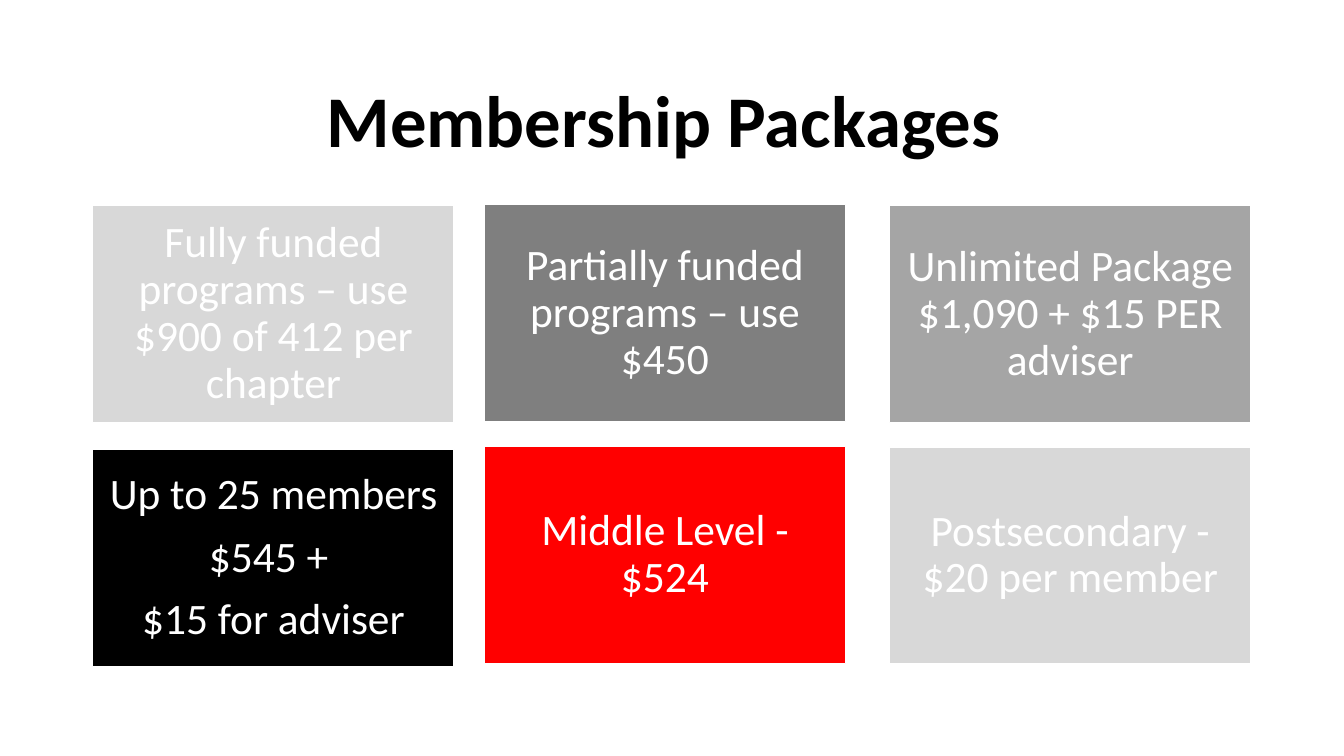
"""Build the Membership Packages slide."""
from pptx import Presentation
from pptx.dml.color import RGBColor as RGB
from pptx.enum.shapes import MSO_SHAPE as SHAPE
from pptx.enum.text import MSO_ANCHOR as ANCHOR, PP_ALIGN as ALIGN
from pptx.util import Pt

BLACK = RGB(0x00, 0x00, 0x00)
WHITE = RGB(0xFF, 0xFF, 0xFF)
RED = RGB(0xFF, 0x00, 0x00)
LIGHT = RGB(0xD8, 0xD8, 0xD8)
MID = RGB(0xA5, 0xA5, 0xA5)
DARK = RGB(0x7F, 0x7F, 0x7F)

FONT = "Calibri"
TITLE = "Membership Packages "
ROWS = [
    [
        (LIGHT, 146.9, ["Fully funded programs – use $900 of 412 per chapter"]),
        (DARK, 146.2, ["Partially funded programs – use $450"]),
        (MID, 146.9, ["Unlimited Package $1,090 + $15 PER adviser"]),
    ],
    [
        (BLACK, 321.1, ["Up to 25 members", "$545 + ", "$15 for adviser"]),
        (RED, 319, ["Middle Level - $524"]),
        (LIGHT, 319.3, ["Postsecondary - $20 per member"]),
    ],
]
LEFTS = [66.2, 345.8, 635.3]
CARD_W, CARD_H = 258.3, 155
INSET = 9.3
SIZE = 31
GAP = 0.35 * SIZE


def write(frame, lines, size, color, bold=False, gap=0):
    frame.word_wrap = True
    frame.vertical_anchor = ANCHOR.MIDDLE
    for i, line in enumerate(lines):
        para = frame.add_paragraph() if i else frame.paragraphs[0]
        para.alignment = ALIGN.CENTER
        para.line_spacing = 0.9
        para.space_after = Pt(gap)
        run = para.add_run()
        run.text = line
        run.font.name = FONT
        run.font.size = Pt(size)
        run.font.bold = bold
        run.font.color.rgb = color


def add_card(slide, left, top, fill, lines):
    card = slide.shapes.add_shape(
        SHAPE.RECTANGLE, Pt(left), Pt(top), Pt(CARD_W), Pt(CARD_H))
    card.shadow.inherit = False
    card.fill.solid()
    card.fill.fore_color.rgb = fill
    card.line.color.rgb = WHITE
    card.line.width = Pt(1)
    frame = card.text_frame
    frame.margin_left = frame.margin_right = Pt(INSET)
    frame.margin_top = frame.margin_bottom = Pt(INSET)
    write(frame, lines, SIZE, WHITE, gap=GAP)


def main():
    deck = Presentation()
    deck.slide_width, deck.slide_height = Pt(960), Pt(540)
    slide = deck.slides.add_slide(deck.slide_layouts[6])
    title = slide.shapes.add_textbox(Pt(66), Pt(44), Pt(828), Pt(89.3))
    write(title.text_frame, [TITLE], 52, BLACK, bold=True)
    for row in ROWS:
        for left, (fill, top, lines) in zip(LEFTS, row):
            add_card(slide, left, top, fill, lines)
    deck.save("out.pptx")


if __name__ == "__main__":
    main()
